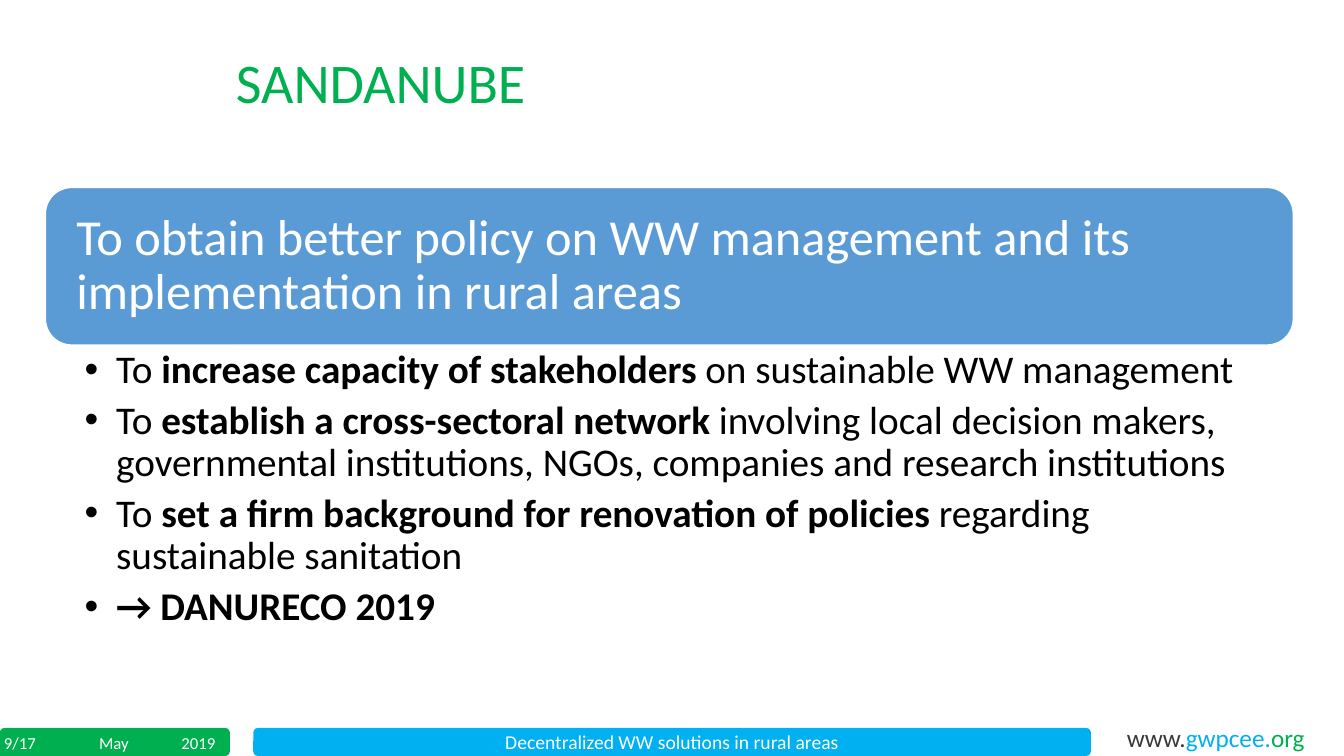
from lxml import etree
from pptx import Presentation
from pptx.dml.color import RGBColor
from pptx.enum import shapes, text
from pptx.oxml import ns
from pptx.util import Pt

FONT = "Calibri"
GREEN, CYAN, BLUE = "00B050", "00B0F0", "5B9BD5"
WHITE, BLACK, GREY = "FFFFFF", "000000", "3B3838"
LEFT, CENTER = text.PP_ALIGN.LEFT, text.PP_ALIGN.CENTER
TOP, MIDDLE = text.MSO_ANCHOR.TOP, text.MSO_ANCHOR.MIDDLE
ROUND, RECT = shapes.MSO_SHAPE.ROUNDED_RECTANGLE, shapes.MSO_SHAPE.RECTANGLE

HEADING = "SANDANUBE"
GOAL = "To obtain better policy on WW management and its implementation in rural areas"
AIMS = [
    ("To ", "increase capacity of stakeholders ", "on sustainable WW management"),
    ("To ", "establish a cross-sectoral network ",
     "involving local decision makers, governmental institutions, NGOs, companies and research institutions"),
    ("To ", "set a firm background for renovation of policies ",
     "regarding sustainable sanitation"),
    ("", "→ DANURECO 2019", ""),
]
TOPIC = "Decentralized WW solutions in rural areas"
SITE = [("www.", GREY), ("gwpcee.", CYAN), ("org", GREEN)]

FOOTER_BARS = [
    (ROUND, (0, 520, 164.2, 20), GREEN, ""),
    (ROUND, (180.9, 520, 598.3, 20), CYAN, TOPIC),
    (RECT, (0, 522, 37.4, 18), GREEN, ""),
]
FOOTER_LABELS = [
    ([("May", WHITE)], (43.9, 519.9, 74.9, 21.6), 12, CENTER, MIDDLE),
    ([("2019", WHITE)], (122.4, 519.9, 41.8, 21.6), 12, LEFT, TOP),
    ([("9/17", WHITE)], (-4.3, 519.9, 53.3, 21.6), 12, LEFT, TOP),
    (SITE, (797.8, 512.6, 143.3, 28.8), 18, LEFT, TOP),
]


def color(value):
    return RGBColor.from_string(value)


def apply(target, values):
    for key, value in values.items():
        setattr(target, key, value)


def place(part, box):
    apply(part, dict(zip(("left", "top", "width", "height"), map(Pt, box))))


def frame_format(part, anchor, insets=(7.2, 3.6, 7.2, 3.6), wrap=True):
    sides = ("margin_left", "margin_top", "margin_right", "margin_bottom")
    apply(part.text_frame, {
        "word_wrap": wrap, "auto_size": text.MSO_AUTO_SIZE.NONE,
        "vertical_anchor": anchor, **dict(zip(sides, map(Pt, insets))),
    })


def write(paragraph, runs, size, align=LEFT, **spacing):
    apply(paragraph, {"alignment": align, **spacing})
    for words, hue, bold in runs:
        run = paragraph.add_run()
        run.text = words
        apply(run.font, {"name": FONT, "size": Pt(size), "bold": bold})
        run.font.color.rgb = color(hue)


def add_block(slide, preset, box, fill):
    block = slide.shapes.add_shape(preset, *map(Pt, box))
    block.shadow.inherit = False
    block.fill.solid()
    block.fill.fore_color.rgb = color(fill)
    block.line.fill.background()
    return block


def add_bullet(paragraph, indent):
    props = paragraph._p.get_or_add_pPr()
    props.set("marL", str(Pt(indent)))
    props.set("indent", str(-Pt(indent)))
    etree.SubElement(props, ns.qn("a:buFont")).set("typeface", "Arial")
    etree.SubElement(props, ns.qn("a:buChar")).set("char", "•")


def add_footer(slide):
    for preset, box, fill, words in FOOTER_BARS:
        bar = add_block(slide, preset, box, fill)
        if words:
            frame_format(bar, MIDDLE)
            write(bar.text_frame.paragraphs[0], [(words, WHITE, False)], 14, CENTER)
    for pieces, box, size, align, anchor in FOOTER_LABELS:
        label = slide.shapes.add_textbox(*map(Pt, box))
        frame_format(label, anchor, wrap=False)
        runs = [(words, hue, False) for words, hue in pieces]
        write(label.text_frame.paragraphs[0], runs, size, align)


def add_heading(slide):
    heading = slide.shapes.title
    place(heading, (161.3, 36, 586.8, 88.6))
    frame_format(heading, TOP)
    write(heading.text_frame.paragraphs[0], [(HEADING, GREEN, False)], 40, line_spacing=0.9)


def add_goal(slide):
    goal = add_block(slide, ROUND, (32.4, 133.9, 891.4, 112.6), BLUE)
    goal.line.color.rgb = color(WHITE)
    goal.line.width = Pt(1)
    frame_format(goal, MIDDLE, (16.6, 10.8, 16.6, 10.8))
    write(goal.text_frame.paragraphs[0], [(GOAL, WHITE, False)], 36, line_spacing=0.9)


def add_aims(slide):
    aims = slide.placeholders[1]
    place(aims, (32.4, 246.2, 891.4, 217.4))
    frame_format(aims, TOP, (28.1, 3.6, 20.2, 3.6))
    for number, (lead, strong, rest) in enumerate(AIMS):
        frame = aims.text_frame
        paragraph = frame.add_paragraph() if number else frame.paragraphs[0]
        add_bullet(paragraph, 22.5)
        pieces = ((lead, BLACK, False), (strong, BLACK, True), (rest, BLACK, False))
        write(paragraph, [piece for piece in pieces if piece[0]], 28,
              line_spacing=0.9, space_before=Pt(0), space_after=Pt(6))


def main():
    deck = Presentation()
    apply(deck, {"slide_width": Pt(960), "slide_height": Pt(540)})
    slide = deck.slides.add_slide(deck.slide_layouts[1])
    add_footer(slide)
    add_heading(slide)
    add_goal(slide)
    add_aims(slide)
    deck.save("out.pptx")


if __name__ == "__main__":
    main()
